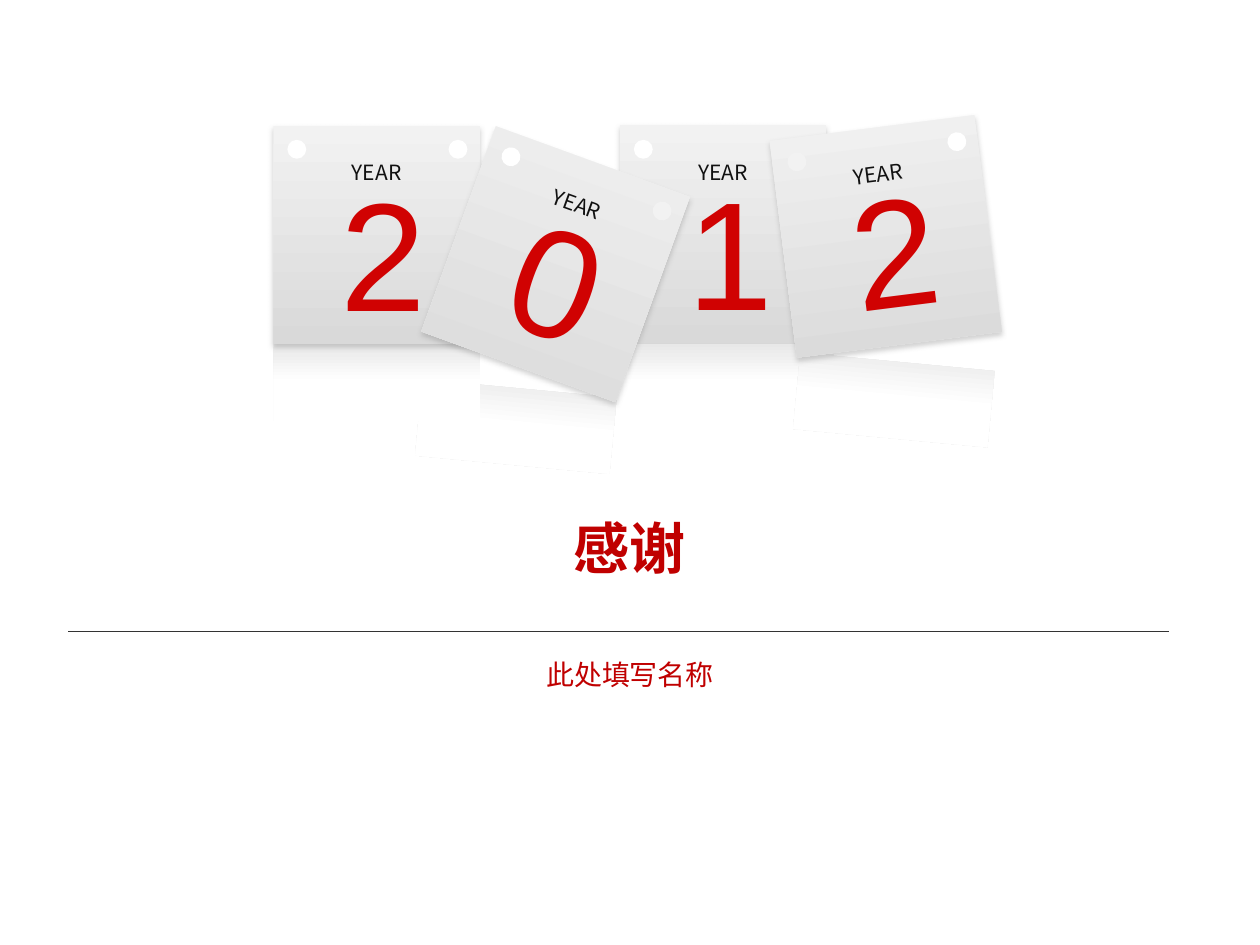
"""Build a closing slide with four calendar cards that spell 2012."""
from lxml.etree import SubElement as Sub
from pptx import Presentation
from pptx.dml.color import RGBColor as RGB
from pptx.enum.shapes import MSO_CONNECTOR as Link, MSO_SHAPE as Kind
from pptx.enum.text import MSO_ANCHOR as Anchor, PP_ALIGN as Align
from pptx.oxml.ns import qn
from pptx.util import Pt

HUE = {
    "red": "C00000", "digit": "D00202", "ink": "111111", "rule": "333333",
    "white": "FFFFFF", "light": "F2F2F2", "mid": "D9D9D9",
    "glow": "E8E8E8", "shade": "808080",
}

deck = Presentation()
deck.slide_width, deck.slide_height = Pt(720), Pt(540)
slide = deck.slides.add_slide(deck.slide_layouts[6])
shapes = slide.shapes


def add_text(text, box, size, face, hue, turn=0, bold=False, anchor=Anchor.TOP):
    label = shapes.add_textbox(*map(Pt, box))
    label.rotation = turn
    frame = label.text_frame
    frame.word_wrap = True
    frame.vertical_anchor = anchor
    para = frame.paragraphs[0]
    para.text = text
    para.alignment = Align.CENTER
    font = para.font
    font.size, font.name, font.bold = Pt(size), face, bold
    font.color.rgb = RGB.from_string(HUE[hue])


def add_shape(kind, box, turn, hues, angle=0, end=1):
    shape = shapes.add_shape(kind, *map(Pt, box))
    shape.rotation = turn
    shape.shadow.inherit = False
    shape.line.fill.background()
    fill = shape.fill
    if len(hues) == 1:
        fill.solid()
        fill.fore_color.rgb = RGB.from_string(HUE[hues[0]])
    else:
        fill.gradient()
        fill.gradient_angle = angle
        for stop, hue, place in zip(fill.gradient_stops, hues, (0, end)):
            stop.color.rgb = RGB.from_string(HUE[hue])
            stop.position = place
    return shape


add_text("感谢", (31, 281.5, 658, 62.6), 32, "Montserrat", "red",
         bold=True, anchor=Anchor.MIDDLE)
add_text("此处填写名称", (31, 372.2, 658, 96.5), 16, "Arial", "red")

rule = shapes.add_connector(Link.STRAIGHT, Pt(38.9), Pt(360.7), Pt(668.2), Pt(360.7))
rule.line.width = Pt(0.75)
rule.line.color.rgb = RGB.from_string(HUE["rule"])
Sub(rule._element.spPr, qn("a:effectLst"))

tilted, flat = (111.6, 185.4), (118, 180)
cards = [
    ("1", 0, (354.2, 71.3), (385.9, 85.7), (354.2, 87.8),
     [(362.2, 79.9, "white"), (454.3, 79.9, "white")],
     [(239, 221.8, *tilted)]),
    ("2", 0, (156.2, 72), (187.2, 86.4), (156.2, 87.8),
     [(164.2, 79.9, "white"), (256.3, 79.9, "white")],
     [(358.6, 196.6, *flat), (455, 206.6, *tilted), (156.2, 196.6, *flat)]),
    ("0", 20, (258.5, 88.6), (288, 100.1), (270.7, 105.8),
     [(286.6, 84.2, "white"), (373, 115.2, "light")], []),
    ("2", 352.8, (447.1, 72.7), (479.5, 85), (442.8, 88.6),
     [(450, 87.1, "light"), (541.4, 75.6, "white")], []),
]

for digit, turn, spot, num, year, holes, glows in cards:
    for x, y, wide, spin in glows:
        add_shape(Kind.RECTANGLE, (x, y, wide, 43.9), spin,
                  ("glow", "white"), 90, 0.49)
    card = add_shape(Kind.RECTANGLE, (*spot, 118, 124.8), turn, ("light", "mid"), 270)
    effect = card._element.spPr.find(qn("a:effectLst"))
    shade = Sub(effect, qn("a:outerShdw"), blurRad=str(Pt(3.1)), dist=str(Pt(1.8)),
                dir="5400000", algn="t", rotWithShape="0")
    tint = Sub(shade, qn("a:srgbClr"), val=HUE["shade"])
    Sub(tint, qn("a:alpha"), val="35000")
    add_text(digit, (*num, 51.8, 113.8), 88, "Arial", "digit", turn)
    for x, y, hue in holes:
        add_shape(Kind.OVAL, (x, y, 10.8, 10.8), turn, (hue,))
    add_text("YEAR", (*year, 118, 21.6), 12, "Noto Sans CJK SC", "ink", turn)

deck.save("out.pptx")
